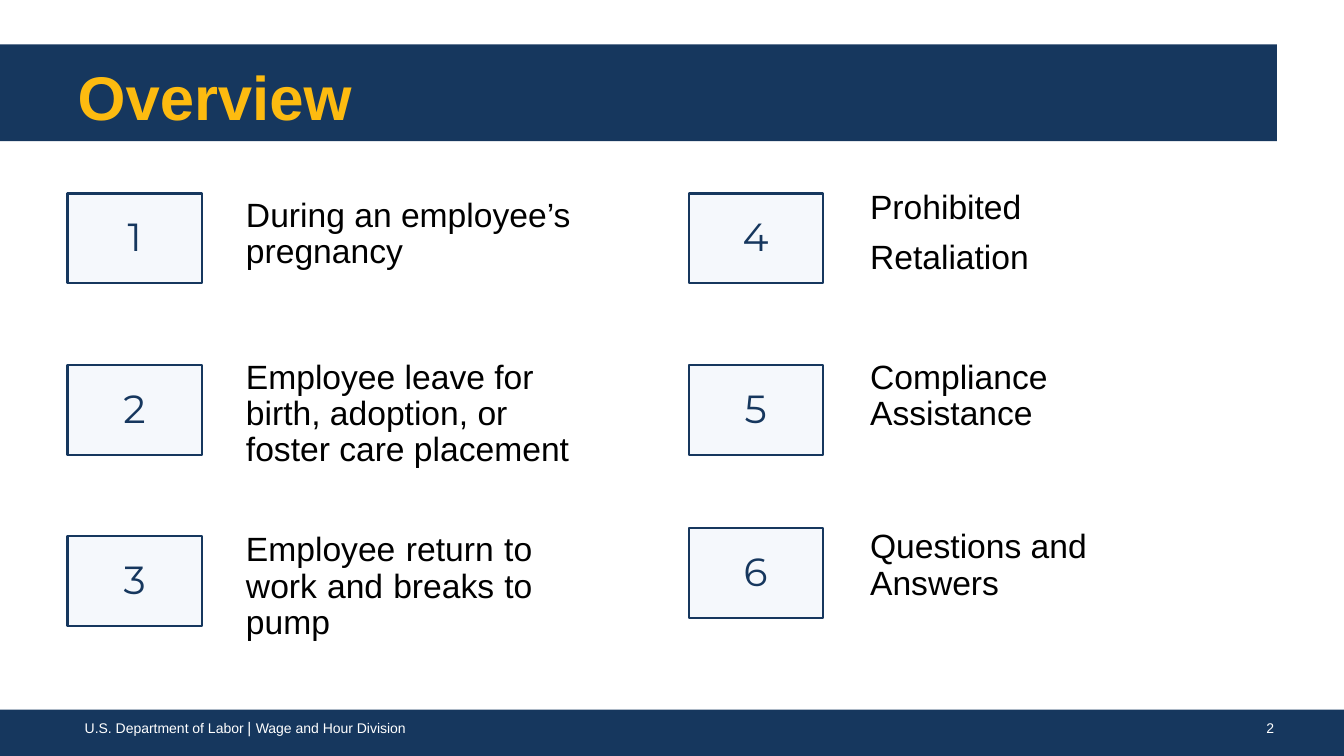
from dataclasses import dataclass

from pptx import Presentation
from pptx.dml.color import RGBColor
from pptx.enum.shapes import MSO_SHAPE
from pptx.enum.text import MSO_ANCHOR, PP_ALIGN
from pptx.util import Inches, Pt


@dataclass(frozen=True)
class Theme:
    navy: str = "16375E"
    gold: str = "FDBB10"
    pale: str = "F5F8FC"
    white: str = "FFFFFF"
    black: str = "000000"
    body_font: str = "Arial"
    number_font: str = "Montserrat"
    title_size: float = 44
    number_size: float = 28
    body_size: float = 24
    divider_size: float = 11
    footer_size: float = 10


@dataclass(frozen=True)
class Topic:
    text: str
    width: float
    height: float
    rise: float  # how far the text starts above its number box
    inset: float = 0.06
    spacing: object = Pt(25.9)
    align: object = PP_ALIGN.LEFT
    lift: float = 0  # how far the whole entry sits above its grid row


THEME = Theme()
SLIDE_WIDTH, SLIDE_HEIGHT = 13.33, 7.5
ROW_PITCH = 1.7
BADGE_WIDTH, BADGE_HEIGHT = 1.33, 0.89

LEFT_TOPICS = (
    Topic("During an employee’s pregnancy", 3.25, 0.79, 0.02),
    Topic("Employee leave for birth, adoption, or foster care placement",
          3.23, 1.15, 0.11),
    Topic("Employee return to work and breaks to pump", 2.85, 1.15, 0.1,
          align=PP_ALIGN.JUSTIFY),
)
RIGHT_TOPICS = (
    Topic("Prohibited Retaliation", 1.6, 1.02, 0.19, inset=0.01, spacing=1.25),
    Topic("Compliance Assistance", 1.79, 0.79, 0.11),
    Topic("Questions and Answers", 2.18, 0.79, 0.05, lift=0.08),
)


def add_box(slide, left, top, width, height, fill, line=None):
    shape = slide.shapes.add_shape(
        MSO_SHAPE.RECTANGLE,
        Inches(left), Inches(top), Inches(width), Inches(height))
    shape.shadow.inherit = False
    shape.fill.solid()
    shape.fill.fore_color.rgb = RGBColor.from_string(fill)
    if line:
        shape.line.color.rgb = RGBColor.from_string(line)
        shape.line.width = Pt(1.5)
    else:
        shape.line.fill.background()
    return shape


def add_text_box(slide, left, top, width, height):
    return slide.shapes.add_textbox(
        Inches(left), Inches(top), Inches(width), Inches(height))


def write(shape, *pieces, size, color, font=THEME.body_font, bold=False,
          align=PP_ALIGN.LEFT, spacing=None, indent=0, inset=0):
    """Fill a shape with one paragraph; a piece is text or (text, size)."""
    frame = shape.text_frame
    frame.word_wrap = True
    frame.vertical_anchor = MSO_ANCHOR.TOP
    frame.margin_left, frame.margin_top = Inches(indent), Inches(inset)
    frame.margin_right = frame.margin_bottom = 0
    paragraph = frame.paragraphs[0]
    paragraph.alignment = align
    paragraph.line_spacing = spacing
    for piece in pieces:
        text, piece_size = (piece, size) if isinstance(piece, str) else piece
        run = paragraph.add_run()
        run.text = text
        run.font.name = font
        run.font.size = Pt(piece_size)
        run.font.bold = bold
        run.font.color.rgb = RGBColor.from_string(color)


def add_title(slide, left, top, width, height):
    banner = add_box(slide, left, top, width, height, THEME.navy)
    write(banner, "Overview", size=THEME.title_size, color=THEME.gold,
          bold=True, indent=0.77, inset=0.14)


def add_footer(slide, left, top, width, height):
    add_box(slide, left, top, width, height, THEME.navy)
    style = {"size": THEME.footer_size, "color": THEME.white}
    agency = add_text_box(slide, left + 0.75, top + 0.08, 3.28, 0.23)
    write(agency, "U.S. Department of Labor ", ("| ", THEME.divider_size),
          "Wage and Hour Division", indent=0.09, **style)
    page = add_text_box(slide, left + width - 0.89, top + 0.1, 0.25, 0.18)
    write(page, "2", indent=0.12, **style)


def add_topic_column(slide, left, top, text_offset, topics, first_number):
    for row, topic in enumerate(topics):
        row_top = top + row * ROW_PITCH - topic.lift
        badge = add_box(slide, left, row_top, BADGE_WIDTH, BADGE_HEIGHT,
                        THEME.pale, THEME.navy)
        write(badge, str(first_number + row), size=THEME.number_size,
              color=THEME.navy, font=THEME.number_font,
              align=PP_ALIGN.CENTER, inset=0.19)
        label = add_text_box(slide, left + text_offset, row_top - topic.rise,
                             topic.width, topic.height)
        write(label, topic.text, size=THEME.body_size, color=THEME.black,
              align=topic.align, spacing=topic.spacing, indent=0.01,
              inset=topic.inset)


def main():
    presentation = Presentation()
    presentation.slide_width = Inches(SLIDE_WIDTH)
    presentation.slide_height = Inches(SLIDE_HEIGHT)
    slide = presentation.slides.add_slide(presentation.slide_layouts[6])
    add_footer(slide, 0, SLIDE_HEIGHT - 0.46, SLIDE_WIDTH, 0.46)
    add_title(slide, 0, 0.44, SLIDE_WIDTH * 0.95, 0.96)
    add_topic_column(slide, 0.67, 1.92, 1.76, LEFT_TOPICS, 1)
    add_topic_column(slide, 6.83, 1.92, 1.79, RIGHT_TOPICS,
                     1 + len(LEFT_TOPICS))
    presentation.save("out.pptx")


if __name__ == "__main__":
    main()
